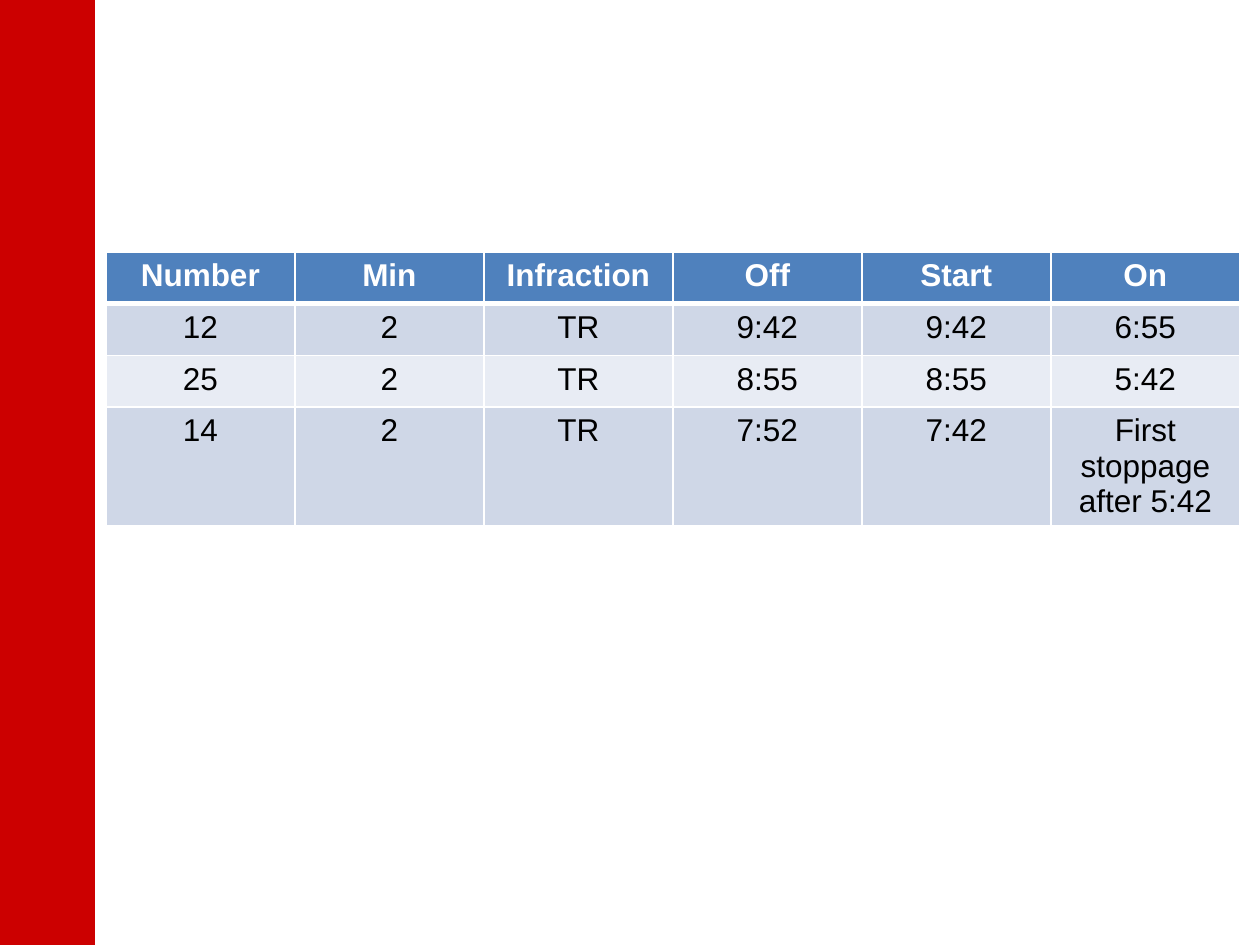
import dataclasses

import lxml.etree
import pptx
import pptx.dml.color
import pptx.enum.shapes
import pptx.enum.text
import pptx.oxml.ns
import pptx.util

Inches = pptx.util.Inches
Pt = pptx.util.Pt


@dataclasses.dataclass(frozen=True)
class Theme:
    font: str = "Arial"
    size: int = 18
    red: str = "CC0000"
    head: str = "4F81BD"
    bands: tuple[str, str] = ("CFD7E7", "E8ECF4")
    white: str = "FFFFFF"
    black: str = "000000"
    thin: int = 1
    thick: int = 3


@dataclasses.dataclass(frozen=True)
class Row:
    texts: tuple[str, ...]
    fill: str
    color: str
    bold: bool = False
    top: int = 1
    base: int = 1


THEME = Theme()
HEADS = ("Number", "Min", "Infraction", "Off", "Start", "On")
CALLS = (
    ("12", "2", "TR", "9:42", "9:42", "6:55"),
    ("25", "2", "TR", "8:55", "8:55", "5:42"),
    ("14", "2", "TR", "7:52", "7:42", "First stoppage after 5:42"),
)
LEFT, TOP, WIDTH, HEIGHT = 0.84, 2, 1.5, 0.41


def rgb(code: str) -> pptx.dml.color.RGBColor:
    return pptx.dml.color.RGBColor.from_string(code)


def add_edge(cell, side: str, width: int) -> None:
    qn = pptx.oxml.ns.qn
    props = cell._tc.get_or_add_tcPr()
    line = lxml.etree.SubElement(props, qn(f"a:ln{side}"), w=str(Pt(width)))
    fill = lxml.etree.SubElement(line, qn("a:solidFill"))
    lxml.etree.SubElement(fill, qn("a:srgbClr"), val=THEME.white)


def draw_cell(cell, text: str, row: Row) -> None:
    # Edges come before the fill in the cell's XML
    for side, width in zip("LRTB", (THEME.thin, THEME.thin, row.top, row.base)):
        add_edge(cell, side, width)
    cell.fill.solid()
    cell.fill.fore_color.rgb = rgb(row.fill)
    para = cell.text_frame.paragraphs[0]
    para.alignment = pptx.enum.text.PP_ALIGN.CENTER
    run = para.add_run()
    run.text = text
    run.font.name = THEME.font
    run.font.size = Pt(THEME.size)
    run.font.bold = row.bold
    run.font.color.rgb = rgb(row.color)


def draw_table(slide, rows: list[Row]) -> None:
    count = len(HEADS)
    table = slide.shapes.add_table(
        len(rows), count, Inches(LEFT), Inches(TOP),
        Inches(WIDTH * count), Inches(HEIGHT * len(rows)),
    ).table
    for col in table.columns:
        col.width = Inches(WIDTH)
    for line, row in zip(table.rows, rows):
        line.height = Inches(HEIGHT)
        for cell, text in zip(line.cells, row.texts):
            draw_cell(cell, text, row)


def draw_band(slide, height: int) -> None:
    band = slide.shapes.add_shape(
        pptx.enum.shapes.MSO_SHAPE.RECTANGLE, 0, 0, Inches(0.75), height
    )
    band.shadow.inherit = False
    band.fill.solid()
    band.fill.fore_color.rgb = rgb(THEME.red)
    band.line.color.rgb = rgb(THEME.red)
    band.line.width = Pt(0.75)


def main() -> None:
    deck = pptx.Presentation()
    deck.slide_width, deck.slide_height = Inches(10), Inches(7.5)
    slide = deck.slides.add_slide(deck.slide_layouts[6])

    # Red side band
    draw_band(slide, deck.slide_height)

    # Penalty table: heading, then rows in alternating tints
    rows = [Row(HEADS, THEME.head, THEME.white, bold=True, base=THEME.thick)]
    for i, call in enumerate(CALLS):
        top = THEME.thin if i else THEME.thick
        rows.append(Row(call, THEME.bands[i % 2], THEME.black, top=top))
    draw_table(slide, rows)

    deck.save("out.pptx")


if __name__ == "__main__":
    main()
